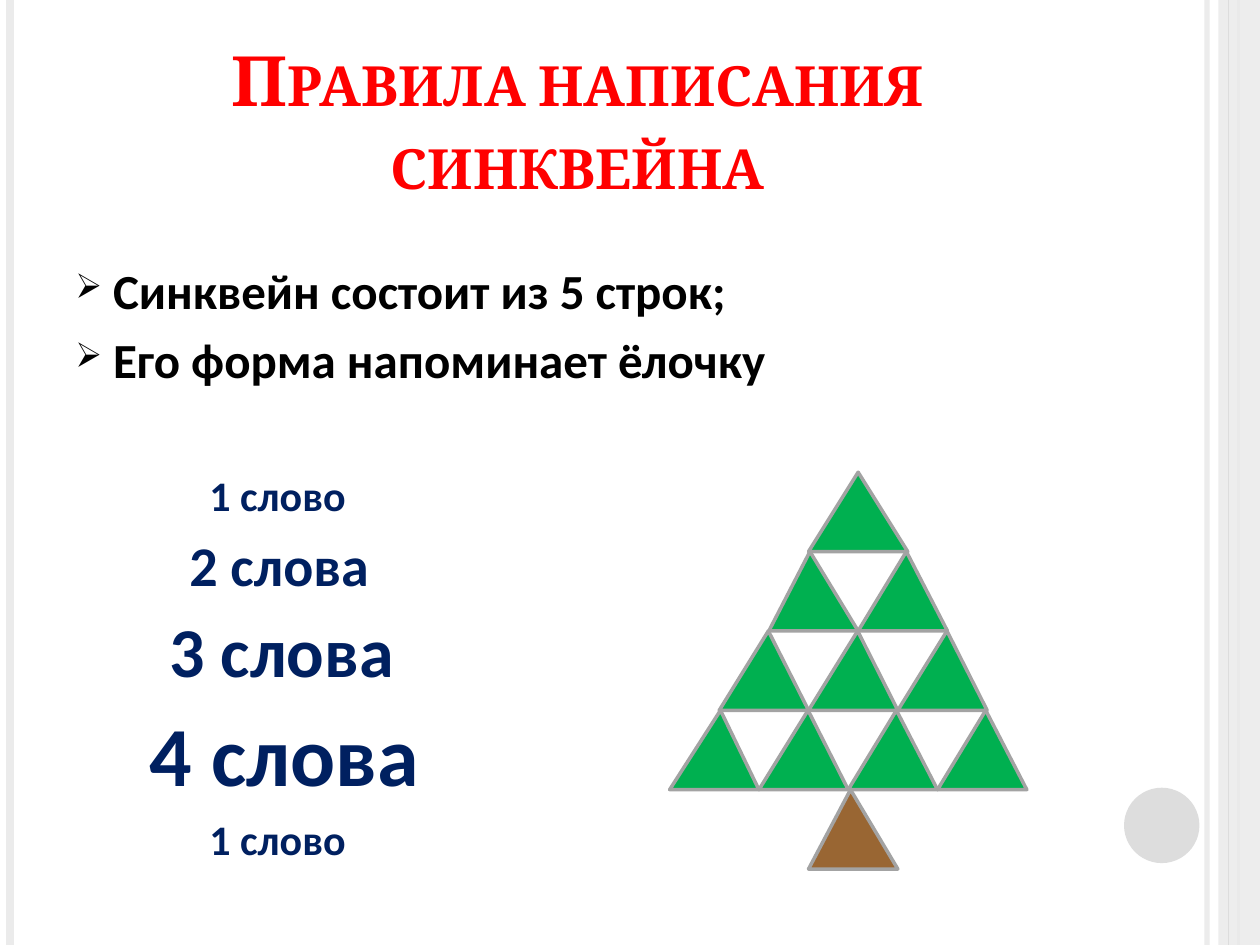
import pptx
import pptx.dml.color
import pptx.enum.shapes
import pptx.enum.text
import pptx.oxml
import pptx.oxml.ns
import pptx.util
from pptx.util import Cm

SHAPE = pptx.enum.shapes.MSO_SHAPE
ANCHOR = pptx.enum.text.MSO_ANCHOR
ALIGN = pptx.enum.text.PP_ALIGN
GREEN, BROWN, OUTLINE = "00B050", "996633", "A3A3A3"
BLACK, RED, NAVY = "000000", "FF0000", "002060"
PALE, GREY = "EBEBEB", "DDDDDD"

SIDE, ROW_HEIGHT, TREE_TOP = 1.8, 1.6, 9.52
# left edge of each row, width of its triangles, apex position of each one
TREE_ROWS = [
    (16.3, 2.0, [0.5]),
    (15.5, SIDE, [0.46, 0.54]),
    (14.5, SIDE, [0.55, 0.55, 0.55]),
    (13.5, SIDE, [0.57, 0.55, 0.54, 0.54]),
]
# text, size, indent in cm
WORD_LINES = [
    ("1 слово", 24, 2.7),
    ("2 слова", 32, 2.3),
    ("3 слова", 40, 1.9),
    ("4 слова", 48, 1.5),
    ("1 слово", 24, 2.7),
]


def rgb(color):
    return pptx.dml.color.RGBColor.from_string(color)


def add_child(parent, tag, **attrs):
    child = pptx.oxml.parse_xml(f"<a:{tag} {pptx.oxml.ns.nsdecls('a')}/>")
    for name, value in attrs.items():
        child.set(name, str(value))
    parent.append(child)


def set_alpha(element, percent):
    """Make the first solid colour inside element partly transparent."""
    clr = next(element.iter(pptx.oxml.ns.qn("a:srgbClr")))
    add_child(clr, "alpha", val=percent * 1000)


def add_rule(s, x, color, width, alpha=None):
    """Draw a vertical line over the full slide height."""
    line = s.shapes.add_connector(
        pptx.enum.shapes.MSO_CONNECTOR.STRAIGHT, Cm(x), 0, Cm(x), Cm(19.05))
    line.line.color.rgb = rgb(color)
    line.line.width = pptx.util.Pt(width)
    sp_pr = line._element.spPr
    add_child(sp_pr, "effectLst")
    if alpha:
        set_alpha(sp_pr, alpha)


def add_figure(s, kind, x, y, w, h, fill, line=None):
    sp = s.shapes.add_shape(kind, Cm(x), Cm(y), Cm(w), Cm(h))
    sp.shadow.inherit = False
    sp.fill.solid()
    sp.fill.fore_color.rgb = rgb(fill)
    if line:
        sp.line.color.rgb = rgb(line)
        sp.line.width = pptx.util.Pt(2)
    else:
        sp.line.fill.background()
    return sp


def add_triangle(s, x, y, w, apex, fill):
    sp = add_figure(s, SHAPE.ISOSCELES_TRIANGLE, x, y, w, ROW_HEIGHT, fill, OUTLINE)
    sp.adjustments[0] = apex


def add_text_box(s, x, y, w, h, anchor=ANCHOR.TOP):
    tf = s.shapes.add_textbox(Cm(x), Cm(y), Cm(w), Cm(h)).text_frame
    tf.word_wrap = True
    tf.vertical_anchor = anchor
    return tf


def add_text(tf, text, *, size, color, font="Calibri", align=ALIGN.LEFT,
             before=0, indent=0, bullet=None, small_caps=False):
    p = tf.paragraphs[0]
    if p.runs:
        p = tf.add_paragraph()
    p.alignment = align
    p.space_before = pptx.util.Pt(before)
    p_pr = p._p.get_or_add_pPr()
    p_pr.set("marL", str(Cm(indent)))
    if bullet:
        p_pr.set("indent", str(-Cm(indent)))
        add_child(p_pr, "buSzPct", val=70000)
        add_child(p_pr, "buChar", char=bullet)
    r = p.add_run()
    r.text = text
    r.font.name = font
    r.font.size = pptx.util.Pt(size)
    r.font.bold = True
    r.font.color.rgb = rgb(color)
    if small_caps:
        r._r.get_or_add_rPr().set("cap", "small")


def add_frame(s):
    add_rule(s, 24.33, PALE, 3, alpha=93)
    add_rule(s, 0.2, PALE, 4.5)
    add_rule(s, 24.97, GREY, 1.5)
    band = add_figure(s, SHAPE.RECTANGLE, 24.56, 0, 0.84, 19.05, PALE)
    set_alpha(band._element.spPr, 87)
    add_rule(s, 24.77, GREY, 0.75)
    add_figure(s, SHAPE.OVAL, 22.66, 15.88, 1.52, 1.52, GREY)


def add_title(s):
    tf = add_text_box(s, 1.27, 0.76, 20.75, 4.57, ANCHOR.BOTTOM)
    tf.margin_bottom = Cm(1.22)
    add_text(tf, "Правила написания синквейна", size=39.6, color=RED,
             font="Cambria", align=ALIGN.CENTER, small_caps=True)


def add_rules_text(s):
    tf = add_text_box(s, 1.27, 5.13, 20.75, 12.85)
    for text in ("Синквейн состоит из 5 строк;", "Его форма напоминает ёлочку"):
        add_text(tf, text, size=28, color=BLACK, before=6, indent=0.76, bullet="➢")
    for i, (text, size, indent) in enumerate(WORD_LINES):
        add_text(tf, text, size=size, color=NAVY, indent=indent,
                 before=6 if i else 46)


def add_tree(s):
    for row, (left, width, apexes) in enumerate(TREE_ROWS):
        for col, apex in enumerate(apexes):
            add_triangle(s, left + col * width, TREE_TOP + row * ROW_HEIGHT,
                         width, apex, GREEN)
    add_triangle(s, 16.3, TREE_TOP + len(TREE_ROWS) * ROW_HEIGHT, SIDE, 0.47, BROWN)


def main():
    prs = pptx.Presentation()
    prs.slide_width, prs.slide_height = Cm(25.4), Cm(19.05)
    s = prs.slides.add_slide(prs.slide_layouts[6])
    add_frame(s)
    add_title(s)
    add_rules_text(s)
    add_tree(s)
    prs.save("out.pptx")


if __name__ == "__main__":
    main()
